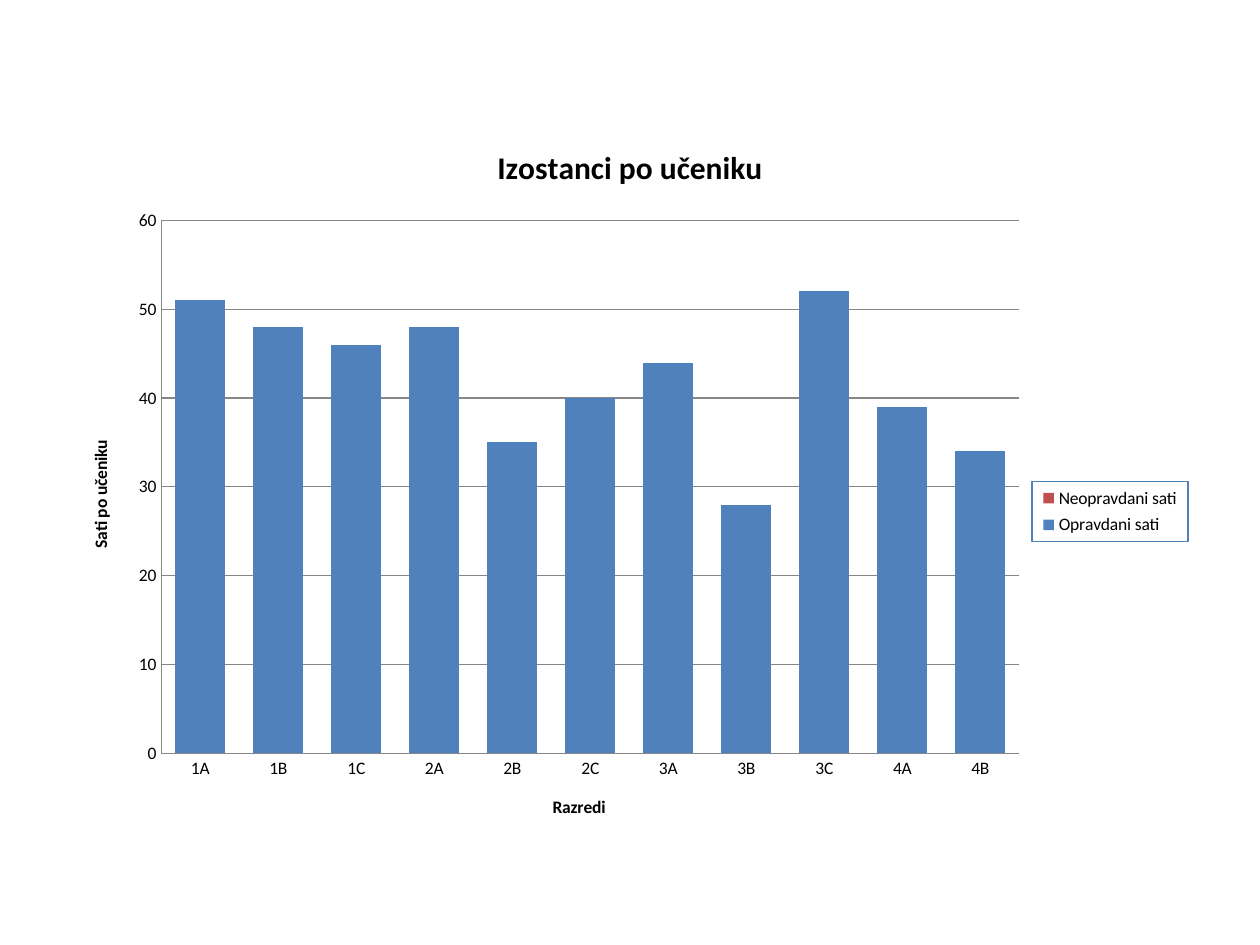
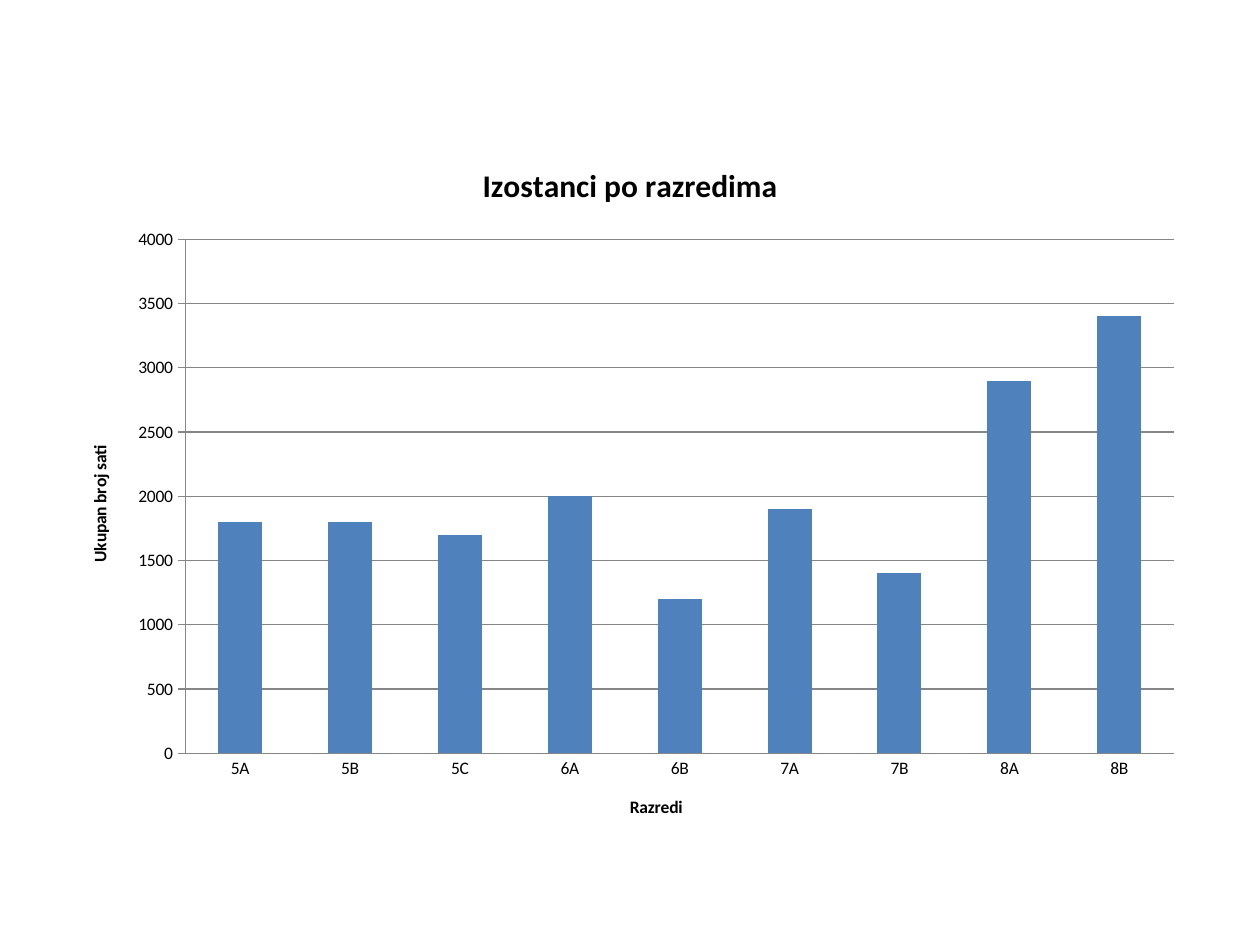
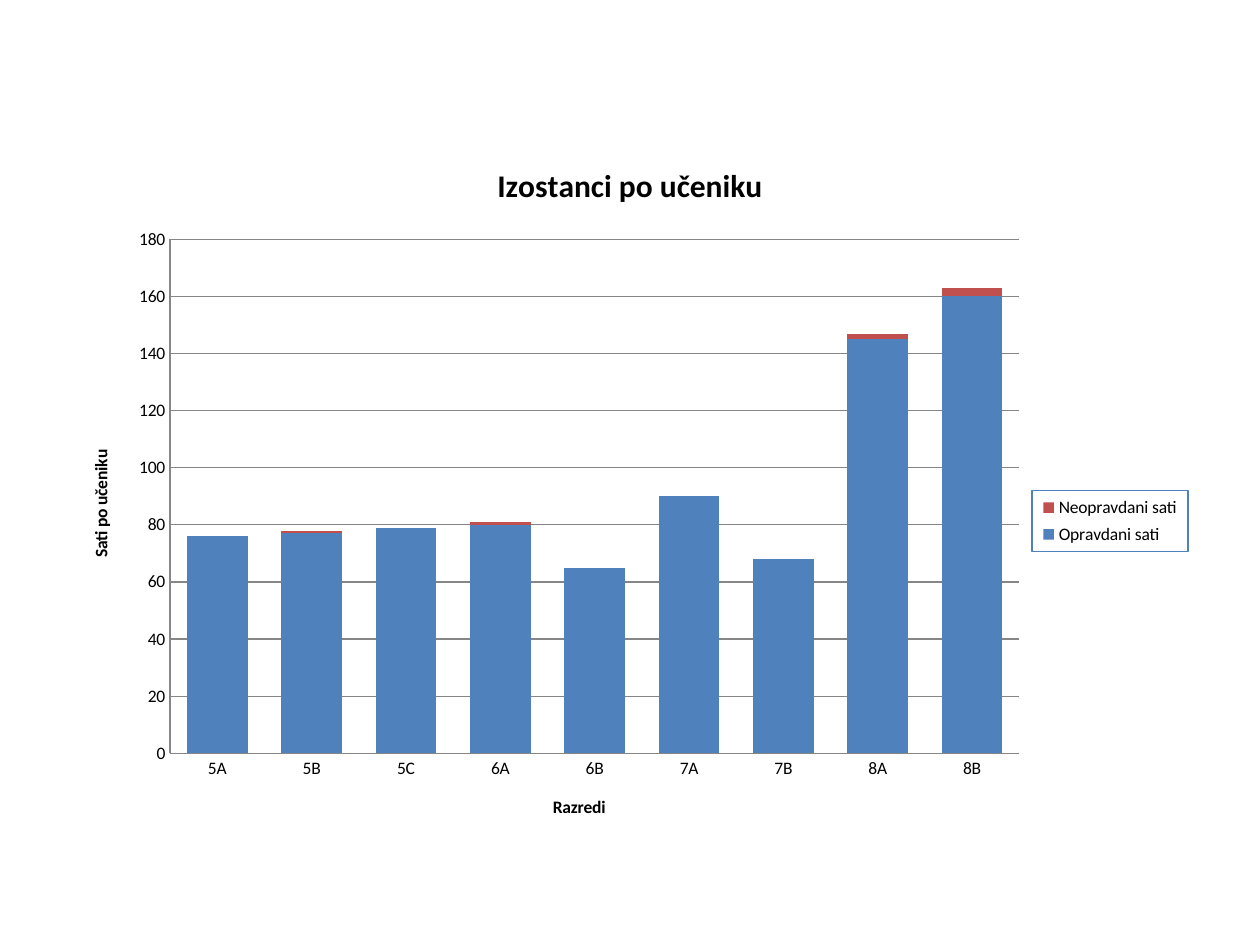
from lxml import etree
from pptx import Presentation
from pptx.chart.data import CategoryChartData
from pptx.dml.color import RGBColor
from pptx.enum.chart import XL_CHART_TYPE, XL_LEGEND_POSITION, XL_TICK_MARK
from pptx.oxml import parse_xml
from pptx.oxml.ns import qn
from pptx.util import Inches, Pt

FONT = "Calibri"
BLACK, GRAY, BLUE, RED = "000000", "868686", "4F81BD", "C0504D"
CHART_LEFT, CHART_WIDTH, CHART_BOTTOM = 0.5, 9, 6.7
PLOT_BOTTOM = 5.98
LEGEND_LEFT, LEGEND_WIDTH, LEGEND_HEIGHT = 8.19, 1.24, 0.48
NAMESPACES = ('xmlns:c="http://schemas.openxmlformats.org/drawingml/2006/chart" '
              'xmlns:a="http://schemas.openxmlformats.org/drawingml/2006/main"')

LOWER_CLASSES = ["1A", "1B", "1C", "2A", "2B", "2C", "3A", "3B", "3C", "4A", "4B"]
UPPER_CLASSES = ["5A", "5B", "5C", "6A", "6B", "7A", "7B", "8A", "8B"]


def color(hex_string):
    return RGBColor.from_string(hex_string)


def format_font(font, size=10, bold=False, fill=BLACK):
    font.name, font.size, font.bold = FONT, Pt(size), bold
    font.color.rgb = color(fill)


def write(frame, text, **style):
    frame.text = text
    format_font(frame.paragraphs[0].runs[0].font, **style)


def place(parent, index, box, frame, inner=False):
    """Fix a chart part at box (left, top, width, height in inches on the slide)."""
    for old_layout in parent.findall(qn("c:layout")):
        parent.remove(old_layout)
    layout = etree.SubElement(parent, qn("c:layout"))
    manual = etree.SubElement(layout, qn("c:manualLayout"))
    settings = [("layoutTarget", "inner")] if inner else []
    settings += [("xMode", "edge"), ("yMode", "edge")]
    left, top, width, height = frame
    settings += [("x", (box[0] - left) / width), ("y", (box[1] - top) / height),
                 ("w", box[2] / width), ("h", box[3] / height)]
    for tag, value in settings:
        etree.SubElement(manual, qn(f"c:{tag}")).set("val", str(value))
    parent.insert(index, layout)


class AbsenceDeck:
    def __init__(self):
        self.deck = Presentation()
        self.deck.slide_width, self.deck.slide_height = Inches(10), Inches(7.5)
        self.slide = None

    def new_slide(self):
        self.slide = self.deck.slides.add_slide(self.deck.slide_layouts[6])

    def axis(self, axis, title, tick=XL_TICK_MARK.NONE):
        write(axis.axis_title.text_frame, title, bold=True)
        axis.major_tick_mark, axis.minor_tick_mark = tick, XL_TICK_MARK.NONE
        format_font(axis.tick_labels.font)
        axis.format.line.color.rgb = color(GRAY)
        axis.format.line.width = Pt(0.75)

    def value_scale(self, axis, maximum, step):
        axis.minimum_scale, axis.maximum_scale, axis.major_unit = 0, maximum, step
        axis.has_major_gridlines = True
        axis.major_gridlines.format.line.color.rgb = color(GRAY)
        axis.major_gridlines.format.line.width = Pt(0.75)
        axis.tick_labels.number_format = "0"
        axis.tick_labels.number_format_is_linked = False

    def legend(self, chart, frame):
        chart.has_legend = True
        legend = chart.legend
        legend.position = XL_LEGEND_POSITION.RIGHT
        legend.include_in_layout = False
        format_font(legend.font)
        element = legend._element
        top = frame[1] + frame[3] / 2
        place(element, 1, (LEGEND_LEFT, top, LEGEND_WIDTH, LEGEND_HEIGHT), frame)
        border = parse_xml(
            f'<c:spPr {NAMESPACES}><a:ln w="9525"><a:solidFill><a:srgbClr val="{BLUE}"/>'
            '</a:solidFill></a:ln></c:spPr>')
        element.find(qn("c:overlay")).addnext(border)

    def column_chart(self, title, value_title, classes, series, top, plot_box,
                     maximum, step, stacked=True):
        frame = (CHART_LEFT, top, CHART_WIDTH, CHART_BOTTOM - top)
        data = CategoryChartData(number_format="0")
        data.categories = classes
        for name, hours in series.items():
            data.add_series(name, hours)
        kind = XL_CHART_TYPE.COLUMN_STACKED if stacked else XL_CHART_TYPE.COLUMN_CLUSTERED
        chart = self.slide.shapes.add_chart(kind, *map(Inches, frame), data).chart
        format_font(chart.font)
        chart.has_title = True
        write(chart.chart_title.text_frame, title, size=18, bold=True)
        chart.chart_title.include_in_layout = False

        # Axes
        self.axis(chart.category_axis, "Razredi")
        self.axis(chart.value_axis, value_title,
                  XL_TICK_MARK.NONE if stacked else XL_TICK_MARK.CROSS)
        self.value_scale(chart.value_axis, maximum, step)

        # Columns
        plot = chart.plots[0]
        plot.vary_by_categories = False
        plot.gap_width = 55 if stacked else 150
        if stacked:
            plot.overlap = 100
        for columns, fill in zip(plot.series, (BLUE, RED)):
            columns.format.fill.solid()
            columns.format.fill.fore_color.rgb = color(fill)
            columns.invert_if_negative = False

        # Plot area and legend
        left, plot_top, right = plot_box
        place(chart._chartSpace.chart.plotArea, 0,
              (left, plot_top, right - left, PLOT_BOTTOM - plot_top), frame, inner=True)
        if stacked:
            self.legend(chart, frame)
        else:
            chart.has_legend = False


def main():
    absences = AbsenceDeck()

    # Hours per pupil, classes 1 to 4
    absences.new_slide()
    absences.column_chart(
        "Izostanci po učeniku", "Sati po učeniku", LOWER_CLASSES,
        {"Opravdani sati": [51, 48, 46, 48, 35, 40, 44, 28, 52, 39, 34],
         "Neopravdani sati": [0] * len(LOWER_CLASSES)},
        top=0.94, plot_box=(1.28, 1.75, 8.09), maximum=60, step=10)

    # Total hours, classes 5 to 8
    absences.new_slide()
    absences.column_chart(
        "Izostanci po razredima", "Ukupan broj sati", UPPER_CLASSES,
        {"Series 1": [1800, 1800, 1700, 2000, 1200, 1900, 1400, 2900, 3400]},
        top=1.09, plot_box=(1.47, 1.9, 9.32), maximum=4000, step=500, stacked=False)

    # Hours per pupil, classes 5 to 8
    absences.new_slide()
    absences.column_chart(
        "Izostanci po učeniku", "Sati po učeniku", UPPER_CLASSES,
        {"Opravdani sati": [76, 77, 79, 80, 65, 90, 68, 145, 160],
         "Neopravdani sati": [0, 1, 0, 1, 0, 0, 0, 2, 3]},
        top=1.09, plot_box=(1.35, 1.9, 8.09), maximum=180, step=20)

    absences.deck.save("out.pptx")


if __name__ == "__main__":
    main()
